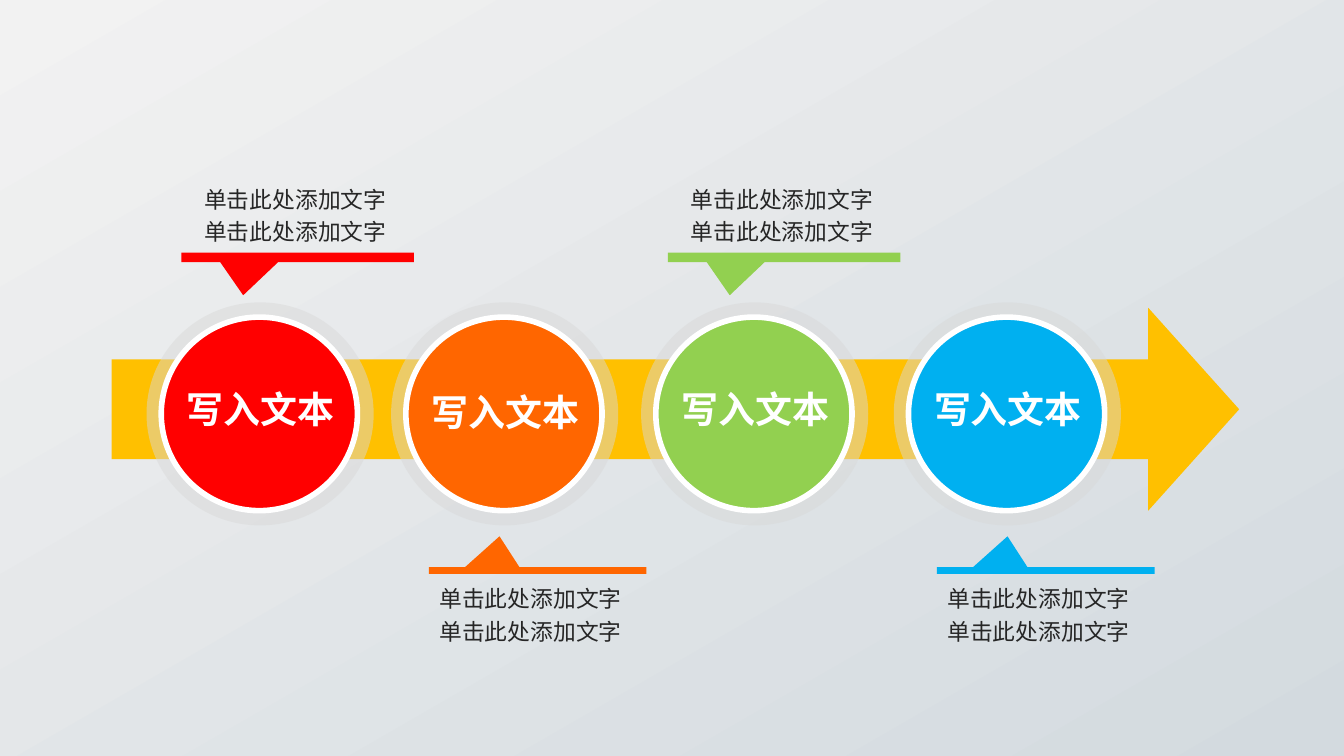
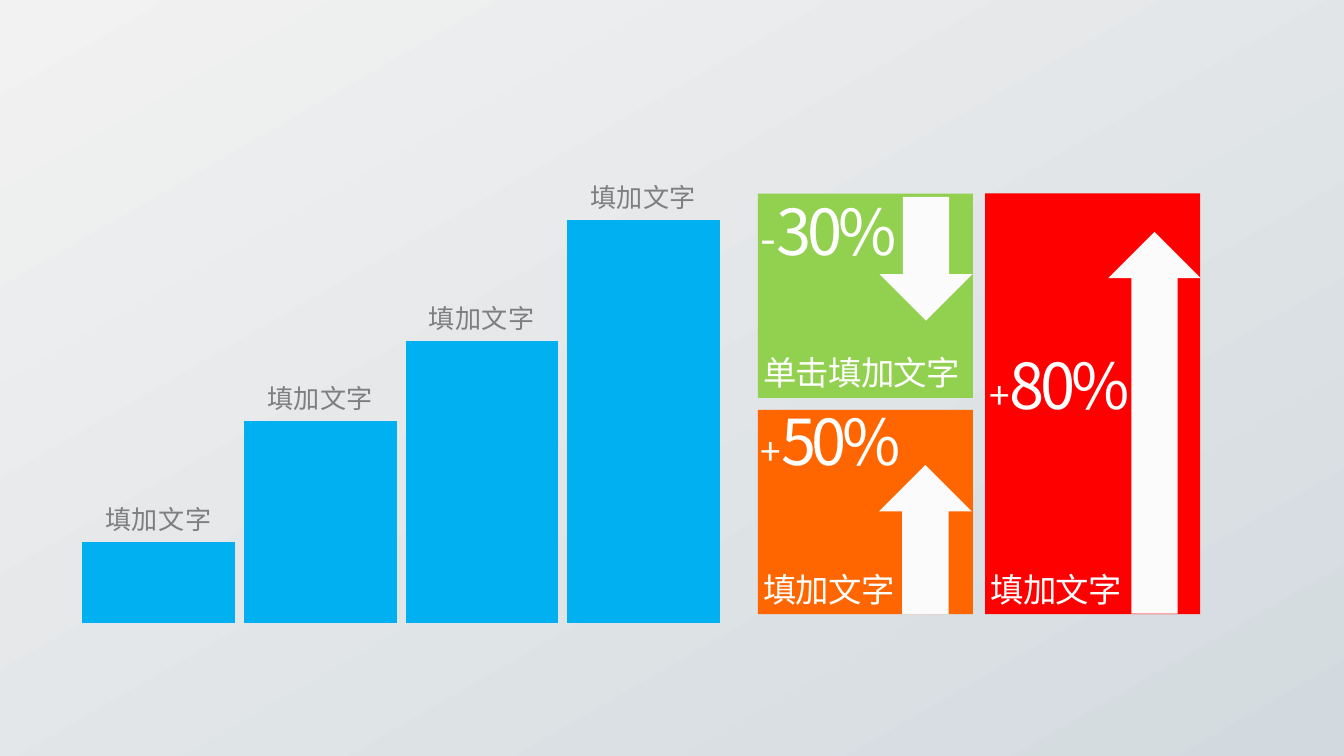
from lxml import etree
from pptx import Presentation
from pptx.chart.data import CategoryChartData
from pptx.dml.color import RGBColor
from pptx.enum.chart import XL_CHART_TYPE as ChartType, XL_LABEL_POSITION as LabelPosition
from pptx.enum.shapes import MSO_SHAPE as Shape
from pptx.enum.text import MSO_ANCHOR as Anchor, MSO_AUTO_SIZE as AutoSize, PP_ALIGN as Align
from pptx.oxml import parse_xml
from pptx.oxml.ns import nsdecls, qn
from pptx.util import Inches, Pt

WIDTH = 10
HEIGHT = WIDTH * 9 / 16
FONT = "Noto Sans CJK SC"
COLORS = {
    "light": "F2F2F2", "mist": "D3DADF", "gold": "FFC000", "halo": "D8D8D8",
    "red": "FF0000", "orange": "FF6600", "green": "92D050", "blue": "00B0F0",
    "white": "FFFFFF", "arrow": "FBFBFB", "dark": "262626", "gray": "7F7F7F",
}
CIRCLES = [(2.91, 2.85, "orange"), (4.77, 2.83, "green"), (6.65, 2.83, "blue"), (1.09, 2.83, "red")]
UPPER = {"size": (1.73, 0.07), "top": 1.88, "pointer": (-0.234, 4.033), "shift": 0.07, "text_top": 1.29}
LOWER = {"size": (1.62, 0.05), "top": 4.22, "pointer": (-0.175, -5.095), "shift": -0.02, "text_top": 4.26}
CALLOUTS = [(3.19, "orange", LOWER), (1.35, "red", UPPER), (4.97, "green", UPPER), (6.97, "blue", LOWER)]
TILES = [
    ((7.33, 1.44, 1.6, 3.13), "red", "填加文字"),
    ((5.64, 1.44, 1.6, 1.52), "green", "单击填加文字"),
    ((5.64, 3.05, 1.6, 1.52), "orange", "填加文字"),
]
TILE_ARROWS = [((7.17, 2.8, 2.84, 0.69), 270), ((6.43, 1.58, 0.92, 0.69), 90), ((6.33, 3.67, 1.11, 0.69), 270)]
PERCENTAGES = [
    ((7.36, 2.58, 1.18, 0.57), "+", 19.8, "80%"),
    ((5.66, 2.99, 1.57, 0.57), "+", 19.8, "50%"),
    ((5.66, 1.43, 1.58, 0.57), "-", 24.5, "30%"),
]
BAR_VALUES = {"WB5": 20, "WB7": 50, "WB8": 70, "WB9": 100}


def rgb(name):
    return RGBColor.from_string(COLORS[name])


def set_attributes(target, values):
    for name, value in values.items():
        setattr(target, name, value)


def add_figure(shapes, kind, box, color, rotation=0, adjustments=(), alpha=None):
    shape = shapes.add_shape(kind, *map(Inches, box))
    shape.shadow.inherit = False
    shape.rotation = rotation
    shape.fill.solid()
    shape.fill.fore_color.rgb = rgb(color)
    shape.line.fill.background()
    for index, value in enumerate(adjustments):
        shape.adjustments[index] = value
    if alpha:
        color_element = shape.element.spPr.find(qn("a:solidFill"))[0]
        etree.SubElement(color_element, qn("a:alpha"), val=str(alpha * 1000))
    return shape


def add_run(paragraph, text, size, color, bold=False, spacing=0):
    run = paragraph.add_run()
    run.text = text
    set_attributes(run.font, {"size": Pt(size), "bold": bold, "name": FONT})
    run.font.color.rgb = rgb(color)
    properties = run._r.get_or_add_rPr()
    etree.SubElement(properties, qn("a:ea"), typeface=FONT)
    if spacing:
        properties.set("spc", str(round(spacing * 100)))


def set_frame(frame, insets, anchor=Anchor.TOP, auto_size=AutoSize.NONE):
    horizontal, vertical = map(Inches, insets)
    set_attributes(frame, {
        "word_wrap": True, "auto_size": auto_size, "vertical_anchor": anchor,
        "margin_left": horizontal, "margin_right": horizontal,
        "margin_top": vertical, "margin_bottom": vertical,
    })


def add_text_box(shapes, box, insets, auto_size=AutoSize.NONE):
    frame = shapes.add_textbox(*map(Inches, box)).text_frame
    set_frame(frame, insets, auto_size=auto_size)
    return frame


def add_master_background(presentation, slide):
    shape = add_figure(slide.shapes, Shape.RECTANGLE, (0, 0, WIDTH, HEIGHT), "light")
    shape.fill.gradient()
    shape.fill.gradient_angle = 300
    for stop, position, color in zip(shape.fill.gradient_stops, (0, 1), ("light", "mist")):
        stop.position = position
        stop.color.rgb = rgb(color)
    shape.element.nvSpPr.cNvPr.set("id", "100")
    presentation.slide_master.shapes.element.insert(2, shape.element)


def add_circle(slide, left, label_top, color):
    shapes = slide.shapes.add_group_shape().shapes
    add_figure(shapes, Shape.OVAL, (left, 2.25, 1.69, 1.66), "halo", alpha=48)
    disc = add_figure(shapes, Shape.OVAL, (left + 0.11, 2.36, 1.46, 1.44), color)
    disc.line.color.rgb = rgb("white")
    disc.line.width = Pt(3)
    paragraph = add_text_box(shapes, (left - 0.08, label_top, 1.86, 0.59), (0.1, 0.05)).paragraphs[0]
    paragraph.alignment = Align.CENTER
    add_run(paragraph, "写入文本", 19.8, "white", bold=True)


def add_callout(slide, left, color, style):
    add_figure(slide.shapes, Shape.RECTANGULAR_CALLOUT, (left, style["top"], *style["size"]),
               color, adjustments=style["pointer"])
    box = (left + style["shift"], style["text_top"], 1.61, 0.59)
    frame = add_text_box(slide.shapes, box, (0.1, 0.05), AutoSize.SHAPE_TO_FIT_TEXT)
    for paragraph in (frame.paragraphs[0], frame.add_paragraph()):
        paragraph.line_spacing = 1.2
        add_run(paragraph, "单击此处添加文字", 12.2, "dark")


def add_tile(slide, box, color, text):
    frame = add_figure(slide.shapes, Shape.RECTANGLE, box, color).text_frame
    set_frame(frame, (0.04, 0.04), Anchor.BOTTOM)
    paragraph = frame.paragraphs[0]
    set_attributes(paragraph, {"alignment": Align.LEFT, "line_spacing": 0.8})
    add_run(paragraph, text, 17.9, "white", spacing=-0.4)


def add_percentage(slide, box, sign, sign_size, number):
    frame = add_text_box(slide.shapes, box, (0, 0), AutoSize.SHAPE_TO_FIT_TEXT)
    for text, size in ((sign, sign_size), (number, 33.9)):
        add_run(frame.paragraphs[0], text, size, "white", spacing=-2.3)


def add_bar_chart(slide):
    data = CategoryChartData()
    data.categories = list(BAR_VALUES)
    data.add_series("Series 1", list(BAR_VALUES.values()))
    box = map(Inches, (0.48, 0.96, 5.01, 3.75))
    chart = slide.shapes.add_chart(ChartType.COLUMN_CLUSTERED, *box, data).chart
    set_attributes(chart, {"has_legend": False, "has_title": False})
    set_attributes(chart.font, {"size": Pt(14), "name": "Arial"})
    chart.font.color.rgb = rgb("gray")
    set_attributes(chart.value_axis, {
        "minimum_scale": 0, "maximum_scale": 120, "has_major_gridlines": False, "visible": False,
    })
    chart.category_axis.visible = False
    plot = chart.plots[0]
    set_attributes(plot, {"gap_width": 6, "overlap": -98, "vary_by_categories": False})
    series = plot.series[0]
    series.format.fill.solid()
    series.format.fill.fore_color.rgb = rgb("blue")
    for index in range(len(BAR_VALUES)):
        label = series.points[index].data_label
        add_run(label.text_frame.paragraphs[0], "填加文字", 14, "gray")
        label.position = LabelPosition.OUTSIDE_END
    place_plot_area(chart)


def place_plot_area(chart):
    plot_area = chart.element.chart.plotArea
    for layout in plot_area.findall(qn("c:layout")):
        plot_area.remove(layout)
    settings = {"layoutTarget": "inner", "xMode": "edge", "yMode": "edge",
                "x": 0.02, "y": 0.02, "w": 0.96, "h": 0.96}
    children = "".join(f'<c:{name} val="{value}"/>' for name, value in settings.items())
    plot_area.insert(0, parse_xml(
        f'<c:layout {nsdecls("c")}><c:manualLayout>{children}</c:manualLayout></c:layout>'))


def build_process_slide(slide):
    add_figure(slide.shapes, Shape.DOWN_ARROW, (4.27, -1.15, 1.51, 8.39), "gold",
               rotation=270, adjustments=(0.491, 0.448))
    for circle in CIRCLES:
        add_circle(slide, *circle)
    for callout in CALLOUTS:
        add_callout(slide, *callout)


def build_growth_slide(slide):
    for tile in TILES:
        add_tile(slide, *tile)
    for box, rotation in TILE_ARROWS:
        add_figure(slide.shapes, Shape.RIGHT_ARROW, box, "arrow", rotation=rotation)
    for percentage in PERCENTAGES:
        add_percentage(slide, *percentage)
    add_bar_chart(slide)


def main():
    presentation = Presentation()
    set_attributes(presentation, {"slide_width": Inches(WIDTH), "slide_height": Inches(HEIGHT)})
    blank = presentation.slide_layouts[6]
    process, growth = (presentation.slides.add_slide(blank) for _ in range(2))
    add_master_background(presentation, process)
    build_process_slide(process)
    build_growth_slide(growth)
    presentation.save("out.pptx")


if __name__ == "__main__":
    main()
